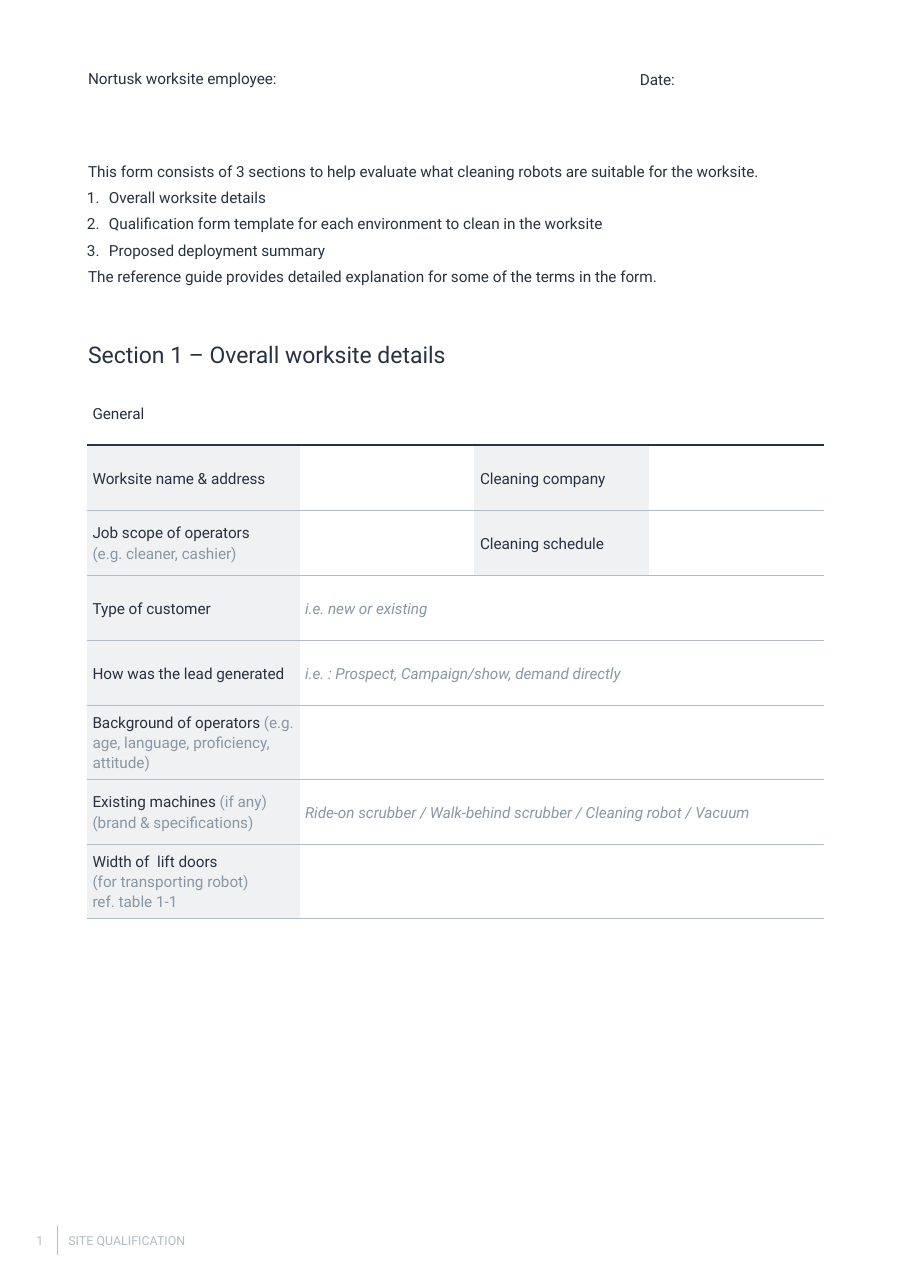
"""Build the first page of a site qualification form."""
from lxml import etree
from pptx import Presentation, util as u
from pptx.dml.color import RGBColor
from pptx.enum import shapes, text
from pptx.oxml.ns import qn

INK = RGBColor(0x28, 0x31, 0x3F)
NOTE = RGBColor(0x89, 0x97, 0xA4)
RULE = RGBColor(0xB3, 0xBB, 0xC5)
SHADE = RGBColor(0xF0, 0xF1, 0xF3)
FACE = "Roboto"
WIDE, HIGH = u.Inches(8.27), u.Inches(11.69)
LEFT = 9.55
COLS = (23.34, 19.2, 19.2, 19.2)
ROW = 5.05
PLAIN = "{2D5ABB26-0587-4C30-8999-92F81FD0307C}"

INTRO = (
    "This form consists of 3 sections to help evaluate what cleaning robots are suitable for the worksite.",
    "Overall worksite details",
    "Qualification form template for each environment to clean in the worksite",
    "Proposed deployment summary",
    "The reference guide provides detailed explanation for some of the terms in the form.",
)
# In a cell, the words after the bar are a grey note.
ROWS = (
    ("General",),
    ("Worksite name & address", "", "Cleaning company", ""),
    ("Job scope of operators\n|(e.g. cleaner, cashier)", "", "Cleaning schedule", ""),
    ("Type of customer", "|i.e. new or existing"),
    ("How was the lead generated", "|i.e. : Prospect, Campaign/show, demand directly"),
    ("Background of operators |(e.g. age, language, proficiency, attitude)", ""),
    ("Existing machines |(if any)\n(brand & specifications)",
     "|Ride-on scrubber / Walk-behind scrubber / Cleaning robot / Vacuum"),
    ("Width of  lift doors \n|(for transporting robot) \nref. table 1-1", ""),
)


def across(share):
    """Turn a percentage of the slide's width into a length."""
    return int(WIDE * share / 100)


def down(share):
    """Turn a percentage of the slide's height into a length."""
    return int(HIGH * share / 100)


def style(run, color, size=10, slant=False):
    """Set the font of one run."""
    font = run.font
    font.name, font.size, font.italic = FACE, u.Pt(size), slant
    font.color.rgb = color


def add_text(slide, x, y, w, h, lines, size=10, color=INK, mid=False):
    """Add a text box without margins and return its paragraphs."""
    box = slide.shapes.add_textbox(across(x), down(y), across(w), down(h))
    frame = box.text_frame
    frame.word_wrap = True
    frame.margin_left = frame.margin_right = 0
    frame.margin_top = frame.margin_bottom = 0
    if mid:
        frame.vertical_anchor = text.MSO_ANCHOR.MIDDLE
    frame.text = "\n".join(lines)
    for para in frame.paragraphs:
        style(para.runs[0], color, size)
    return frame.paragraphs


def indent(para, left, first=0):
    """Set the left and first-line indents in inches."""
    props = para._p.get_or_add_pPr()
    props.set("marL", str(u.Inches(left)))
    props.set("indent", str(u.Inches(first)))
    return props


def add_intro(slide):
    """Add the opening lines with their numbered list."""
    paras = add_text(slide, LEFT, 12.57, 80.77, 13.86, INTRO)
    for i, para in enumerate(paras):
        if 0 < i < len(paras) - 1:
            props = indent(para, 0.2, -0.2)
            etree.SubElement(props, qn("a:buFont"), typeface=FACE)
            etree.SubElement(props, qn("a:buAutoNum"), type="arabicPeriod")
        else:
            indent(para, 0.01)
        if i:
            para.space_before = u.Pt(5.2)


def edge(cell, side, color, width):
    """Draw one border of a cell."""
    props = cell._tc.get_or_add_tcPr()
    line = etree.SubElement(props, qn("a:ln" + side), w=str(u.Pt(width)))
    fill = etree.SubElement(line, qn("a:solidFill"))
    etree.SubElement(fill, qn("a:srgbClr"), val=str(color))


def fill_cell(cell, words, slant):
    """Write a label and its grey note into a cell."""
    cell.vertical_anchor = text.MSO_ANCHOR.MIDDLE
    cell.margin_left = cell.margin_right = u.Inches(0.05)
    cell.margin_top = cell.margin_bottom = u.Inches(0.05)
    para = cell.text_frame.paragraphs[0]
    para.line_spacing = 1.14
    for part, color in zip(words.split("|"), (INK, NOTE)):
        for i, line in enumerate(part.split("\n")):
            if i:
                para.add_line_break()
            if line:
                run = para.add_run()
                run.text = line
                style(run, color, slant=slant)
    for gap in para._p.findall(qn("a:br")):
        etree.SubElement(gap, qn("a:rPr"), sz="1000")


def add_form(slide):
    """Add the table of worksite details."""
    grid = slide.shapes.add_table(
        len(ROWS), len(COLS), across(LEFT), down(29.51),
        across(sum(COLS)), down(ROW * len(ROWS))).table
    grid.first_row = grid.horz_banding = False
    grid._tbl.tblPr.find(qn("a:tableStyleId")).text = PLAIN
    for col, share in zip(grid.columns, COLS):
        col.width = across(share)
    for r, row in enumerate(ROWS):
        grid.rows[r].height = down(ROW)
        for c in range(len(COLS)):
            cell = grid.cell(r, c)
            if r:
                edge(cell, "T", *((INK, 1) if r == 1 else (RULE, 0.25)))
            edge(cell, "B", *((RULE, 0.25) if r else (INK, 1)))
            if r and c < len(row) and c % 2 == 0:
                cell.fill.solid()
                cell.fill.fore_color.rgb = SHADE
            else:
                cell.fill.background()
        for c, words in enumerate(row):
            fill_cell(grid.cell(r, c), words, c == 1)
        if len(row) < len(COLS):
            grid.cell(r, len(row) - 1).merge(grid.cell(r, len(COLS) - 1))


def add_foot(slide):
    """Add the page number, the upright rule and the form's name."""
    x = across(6.29)
    line = slide.shapes.add_connector(
        shapes.MSO_CONNECTOR.STRAIGHT, x, down(95.21), x, down(97.43))
    line.line.color.rgb = RULE
    line.line.width = u.Pt(0.25)
    etree.SubElement(line._element.spPr, qn("a:effectLst"))
    for x, w, words in ((3.99, 2.18, "1"), (7.5, 17.17, "SITE QUALIFICATION")):
        add_text(slide, x, 95.72, w, 1.2, [words], 8.1, RULE, True)


def main():
    """Build and save the page."""
    deck = Presentation()
    deck.slide_width, deck.slide_height = WIDE, HIGH
    slide = deck.slides.add_slide(deck.slide_layouts[6])
    add_foot(slide)
    add_form(slide)
    for x, y, w, words in ((LEFT, 5.39, 42.56, "Nortusk worksite employee:"),
                           (70.13, 5.47, 20.31, "Date:")):
        indent(add_text(slide, x, y, w, 5.73, [words])[0], 0.01)
    add_intro(slide)
    head = add_text(slide, LEFT, 26.43, 50.06, 2.99,
                    ["Section 1 – Overall worksite details"], 15)
    indent(head[0], 0.01)
    deck.save("out.pptx")


if __name__ == "__main__":
    main()
